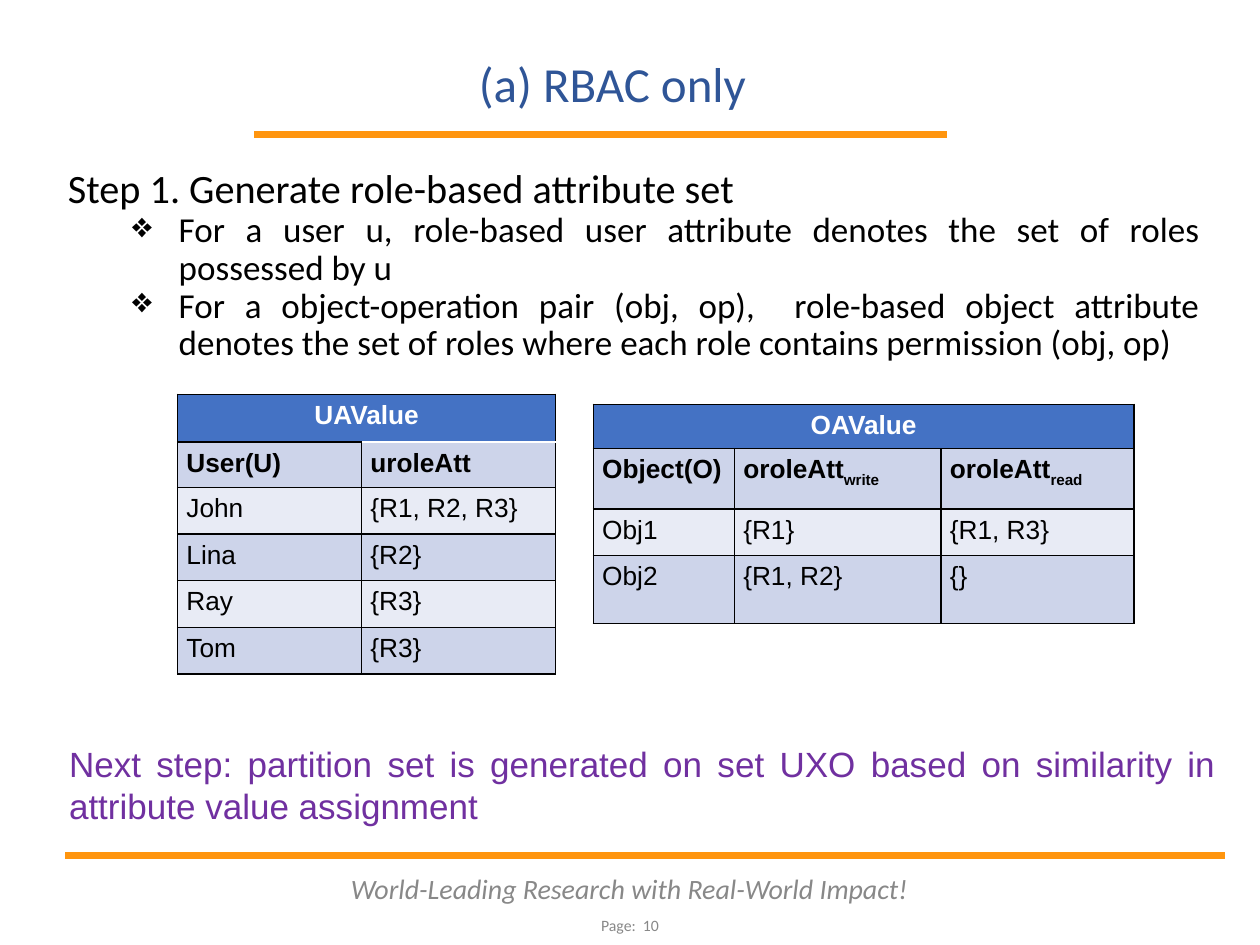
import pptx
import pptx.util
import pptx.dml.color
import pptx.enum.shapes
import pptx.enum.text
import pptx.oxml.ns
import lxml.etree

Inches = pptx.util.Inches
Pt = pptx.util.Pt
RGBColor = pptx.dml.color.RGBColor
ALIGN = pptx.enum.text.PP_ALIGN
ANCHOR = pptx.enum.text.MSO_ANCHOR
qn = pptx.oxml.ns.qn

ORANGE = RGBColor(0xFF, 0x95, 0x0E)
GRAY = RGBColor(0x88, 0x88, 0x88)
NAVY = RGBColor(0x2F, 0x55, 0x97)
BLACK = RGBColor(0, 0, 0)
WHITE = RGBColor(0xFF, 0xFF, 0xFF)
PURPLE = RGBColor(0x70, 0x30, 0xA0)
HEADER = RGBColor(0x44, 0x72, 0xC4)
BAND_DARK = RGBColor(0xCD, 0xD4, 0xEA)
BAND_LIGHT = RGBColor(0xE8, 0xEB, 0xF5)


class SlideBuilder:
    body_font = "Calibri"
    table_font = "Arial"
    table_size = 15
    border_width = Pt(0.96)

    def __init__(self, slide):
        self.s = slide

    def run(self, p, text, size, color, font, bold=False, italic=False, baseline=None):
        r = p.add_run()
        r.text = text
        r.font.size = Pt(size)
        r.font.name = font
        r.font.color.rgb = color
        r.font.bold = bold
        r.font.italic = italic
        if baseline:
            r.font._element.set("baseline", str(baseline))

    def rule(self, left, top, width):
        y = Inches(top)
        sp = self.s.shapes.add_connector(
            pptx.enum.shapes.MSO_CONNECTOR.STRAIGHT, Inches(left), y, Inches(left + width), y)
        sp.line.color.rgb = ORANGE
        sp.line.width = Pt(4)
        lxml.etree.SubElement(sp._element.spPr, qn("a:effectLst"))

    def text_box(self, box, anchor=ANCHOR.TOP):
        sp = self.s.shapes.add_textbox(*map(Inches, box))
        tf = sp.text_frame
        tf.word_wrap = True
        tf.vertical_anchor = anchor
        return tf

    def line_of_text(self, box, text, size, color, anchor, italic=False):
        p = self.text_box(box, anchor).paragraphs[0]
        p.alignment = ALIGN.CENTER
        p.line_spacing = 0.9
        self.run(p, text, size, color, self.body_font, italic=italic)

    def outline(self, box, heading, points):
        tf = self.text_box(box)
        p = tf.paragraphs[0]
        p.alignment = ALIGN.JUSTIFY
        p.line_spacing = 0.9
        self.run(p, heading, 23, BLACK, self.body_font)
        for point in points:
            p = tf.add_paragraph()
            p.level = 1
            p.alignment = ALIGN.JUSTIFY
            p.line_spacing = 0.9
            self.bullet(p, "❖", 0.88, -0.37)
            self.run(p, point, 20, BLACK, self.body_font)

    def bullet(self, p, char, margin, indent):
        pPr = p._p.get_or_add_pPr()
        pPr.set("marL", str(Inches(margin)))
        pPr.set("indent", str(Inches(indent)))
        color = lxml.etree.SubElement(pPr, qn("a:buClr"))
        lxml.etree.SubElement(color, qn("a:srgbClr"), val=str(BLACK))
        lxml.etree.SubElement(pPr, qn("a:buChar"), char=char)

    def callout(self, box, text):
        sp = self.s.shapes.add_shape(
            pptx.enum.shapes.MSO_SHAPE.RECTANGLE, *map(Inches, box))
        sp.shadow.inherit = False
        sp.fill.background()
        sp.line.color.rgb = WHITE
        sp.line.width = Pt(2.25)
        tf = sp.text_frame
        tf.word_wrap = True
        tf.vertical_anchor = ANCHOR.TOP
        p = tf.paragraphs[0]
        p.alignment = ALIGN.JUSTIFY
        self.run(p, text, 20, PURPLE, "Arial")

    def borders(self, cell, top=BLACK, bottom=BLACK):
        tcPr = cell._tc.get_or_add_tcPr()
        sides = (("L", BLACK), ("R", BLACK), ("T", top), ("B", bottom))
        for i, (side, color) in enumerate(sides):
            ln = lxml.etree.Element(qn("a:ln" + side), w=str(self.border_width))
            fill = lxml.etree.SubElement(ln, qn("a:solidFill"))
            lxml.etree.SubElement(fill, qn("a:srgbClr"), val=str(color))
            tcPr.insert(i, ln)

    def table(self, left, top, widths, heights, title, rows, white_edges=()):
        frame = self.s.shapes.add_table(
            len(heights), len(widths), Inches(left), Inches(top),
            Inches(sum(widths)), Inches(sum(heights)))
        tbl = frame.table
        for col, width in zip(tbl.columns, widths):
            col.width = Inches(width)
        for row, height in zip(tbl.rows, heights):
            row.height = Inches(height)
        tbl.cell(0, 0).merge(tbl.cell(0, len(widths) - 1))
        grid = [[title] + [""] * (len(widths) - 1)] + rows
        for i, values in enumerate(grid):
            for j, value in enumerate(values):
                cell = tbl.cell(i, j)
                cell.margin_left = cell.margin_right = Inches(0.07)
                cell.margin_top = cell.margin_bottom = Inches(0.05)
                cell.fill.solid()
                cell.fill.fore_color.rgb = (
                    HEADER if i == 0 else BAND_DARK if i % 2 else BAND_LIGHT)
                self.borders(cell,
                             top=WHITE if i == 1 and j in white_edges else BLACK,
                             bottom=WHITE if i == 0 and j in white_edges else BLACK)
                if value:
                    self.cell_text(cell, value, i)

    def cell_text(self, cell, value, row):
        p = cell.text_frame.paragraphs[0]
        p.alignment = ALIGN.LEFT if row else ALIGN.CENTER
        color = BLACK if row else WHITE
        parts = (value,) if isinstance(value, str) else value
        for text, baseline in zip(parts, (None, -25000)):
            self.run(p, text, self.table_size, color, self.table_font,
                     bold=row < 2, baseline=baseline)


def main():
    prs = pptx.Presentation()
    prs.slide_width = Inches(10)
    prs.slide_height = Inches(7.5)
    b = SlideBuilder(prs.slides.add_slide(prs.slide_layouts[6]))

    b.rule(2.02, 1.07, 5.5)
    b.rule(0.52, 6.79, 9.2)
    b.line_of_text((2.58, 6.89, 4.83, 0.36), "World-Leading Research with Real-World Impact!",
                   16, GRAY, ANCHOR.MIDDLE, italic=True)
    b.line_of_text((4.06, 7.17, 1.88, 0.36), "Page:  10", 9, GRAY, ANCHOR.MIDDLE)
    b.line_of_text((2.44, 0.31, 4.84, 0.64), "(a) RBAC only", 28, NAVY, ANCHOR.BOTTOM)
    b.outline((0.44, 1.29, 9.18, 5.26), "Step 1. Generate role-based attribute set", [
        "For a user u, role-based user attribute denotes the set of roles possessed by u",
        "For a object-operation pair (obj, op),  role-based object attribute denotes "
        "the set of roles where each role contains permission (obj, op)",
    ])
    b.table(1.41, 3.13, [1.46, 1.54], [0.38, 0.36] + [0.37] * 4, "UAValue", [
        ["User(U)", "uroleAtt"],
        ["John", "{R1, R2, R3}"],
        ["Lina", "{R2}"],
        ["Ray", "{R3}"],
        ["Tom", "{R3}"],
    ], white_edges=(1,))
    b.table(4.71, 3.21, [1.12, 1.64, 1.53], [0.33, 0.48, 0.37, 0.54], "OAValue", [
        ["Object(O)", ("oroleAtt", "write"), ("oroleAtt", "read")],
        ["Obj1", "{R1}", "{R1, R3}"],
        ["Obj2", "{R1, R2}", "{}"],
    ])
    b.callout((0.45, 5.84, 9.3, 0.9),
              "Next step: partition set is generated on set UXO based on similarity in "
              "attribute value assignment")
    prs.save("out.pptx")


if __name__ == "__main__":
    main()
